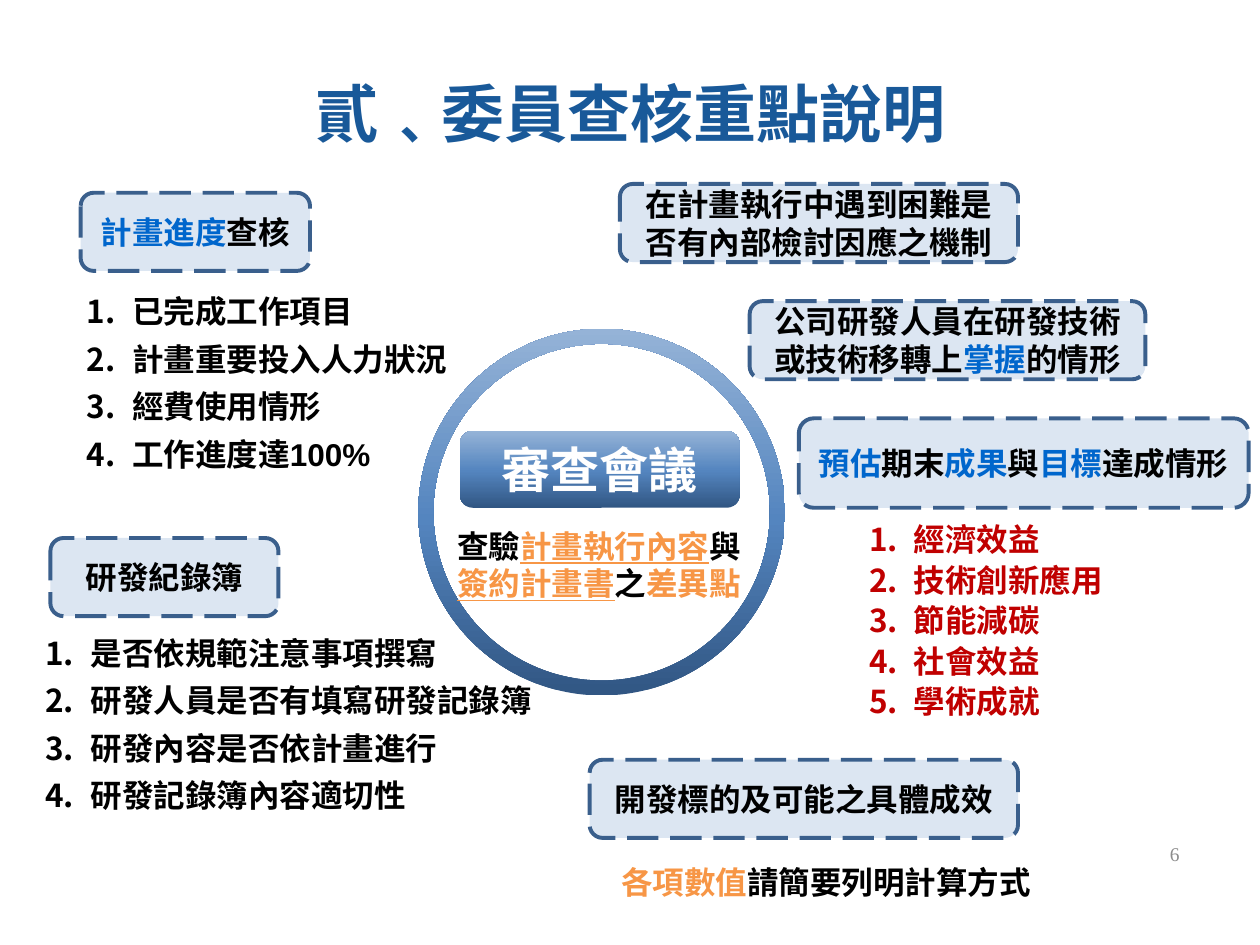
from copy import deepcopy

from lxml.etree import SubElement
from pptx import Presentation
from pptx.dml.color import RGBColor
from pptx.enum.dml import MSO_LINE
from pptx.enum.shapes import MSO_SHAPE
from pptx.enum.text import MSO_ANCHOR, MSO_AUTO_SIZE, PP_ALIGN
from pptx.oxml.ns import qn
from pptx.util import Inches, Pt

BLACK = RGBColor(0, 0, 0)
WHITE = RGBColor(0xFF, 0xFF, 0xFF)
NAVY = RGBColor(0x19, 0x59, 0x99)
BLUE = RGBColor(0x00, 0x66, 0xCC)
ORANGE = RGBColor(0xF7, 0x96, 0x46)
RED = RGBColor(0xC0, 0, 0)
GRAY = RGBColor(0x8C, 0x8C, 0x8C)
PALE = RGBColor(0xDC, 0xE6, 0xF2)
BORDER = RGBColor(0x3A, 0x5F, 0x8C)
GRADIENT = [(0, RGBColor(0x31, 0x56, 0x83)), (0.48, RGBColor(0x54, 0x85, 0xBF)),
            (1, RGBColor(0x95, 0xB3, 0xD7))]
SANS, CJK, SERIF = "Arial", "Noto Sans CJK SC", "Times New Roman"

TITLE = [("貳", NAVY), ("﹑", NAVY, CJK), ("委員查核重點說明", NAVY)]
TOPICS = [
    ((0.64, 1.53, 1.82, 0.62), [("計畫進度", BLUE), ("查核", BLACK)]),
    ((5.95, 2.39, 3.14, 0.62), [("公司研發人員在研發技術或技術移轉上", BLACK),
                                ("掌握", BLUE), ("的情形", BLACK)]),
    ((0.4, 4.27, 1.81, 0.62), [("研發紀錄簿", BLACK)]),
    ((6.34, 3.32, 3.57, 0.71), [("預估", BLUE), ("期末", BLACK), ("成果", BLUE),
                                ("與", BLACK), ("目標", BLUE), ("達成情形", BLACK)]),
    ((4.92, 1.46, 3.16, 0.62), [("在計畫執行中遇到困難是否有內部檢討因應之機制", BLACK)]),
    ((4.68, 6.03, 3.4, 0.62), [("開發標的及可能之具體成效", BLACK)]),
]
LISTS = [
    (2, (0.22, 2.27, 3.51, 1.57), BLACK, 0.73, 0.36, 1.0, 5.5,
     ["已完成工作項目", "計畫重要投入人力狀況", "經費使用情形", "工作進度達100%"]),
    (1, (-0.11, 4.98, 4.45, 1.57), BLACK, 0.73, 0.36, 1.0, 5.5,
     ["是否依規範注意事項撰寫", "研發人員是否有填寫研發記錄簿", "研發內容是否依計畫進行", "研發記錄簿內容適切性"]),
    (4, (6.26, 4.06, 2.98, 1.71), RED, 0.89, 0.35, Pt(23.1), 0,
     ["經濟效益", "技術創新應用", "節能減碳", "社會效益", "學術成就"]),
]
NOTE_INDEX = 3
NOTE = [("各項數值", ORANGE, CJK), ("請簡要列明計算方式", BLACK, CJK)]
MEETING = [("審查會議", WHITE)]
CHECKS = [
    [("查驗", BLACK), ("計畫執行內容", ORANGE, SANS, True), ("與", BLACK)],
    [("簽約計畫書", ORANGE, SANS, True), ("之", BLACK), ("差異點", ORANGE)],
]


def place(sp, box):
    sp.left, sp.top, sp.width, sp.height = map(Inches, box)


def prepare(sp, anchor=MSO_ANCHOR.TOP):
    tf = sp.text_frame
    tf.word_wrap = True
    tf.auto_size = MSO_AUTO_SIZE.NONE
    tf.vertical_anchor = anchor
    return tf


def write(p, runs, size=18, align=PP_ALIGN.CENTER, bold=True):
    p.alignment = align
    p.space_before = Pt(0)
    for text, color, *style in runs:
        r = p.add_run()
        r.text = text
        r.font.name = style[0] if style else SANS
        r.font.size = Pt(size)
        r.font.bold = bold
        r.font.underline = len(style) > 1
        r.font.color.rgb = color


def set_bullet(p, left=0, hanging=0, numbered=False):
    pPr = p._p.get_or_add_pPr()
    pPr.set("marL", str(Inches(left)))
    pPr.set("indent", str(-Inches(hanging)))
    if numbered:
        SubElement(pPr, qn("a:buFont"), typeface=SANS)
        SubElement(pPr, qn("a:buAutoNum"), type="arabicPeriod")
    else:
        SubElement(pPr, qn("a:buNone"))


def add_shape(s, kind, box):
    sp = s.shapes.add_shape(kind, *map(Inches, box))
    sp.shadow.inherit = False
    return sp


def fill_gradient(sp):
    sp.line.fill.background()
    sp.fill.gradient()
    sp.fill.gradient_angle = 90
    stops = sp._element.spPr.find(".//" + qn("a:gsLst"))
    stops.append(deepcopy(stops[-1]))
    for stop, (position, color) in zip(sp.fill.gradient_stops, GRADIENT):
        stop.position = position
        stop.color.rgb = color


def main():
    prs = Presentation()
    prs.slide_width, prs.slide_height = Inches(10), Inches(7.5)
    s = prs.slides.add_slide(prs.slide_layouts.get_by_name("Comparison"))

    place(s.shapes.title, (0.46, 0.67, 9.09, 0.44))
    tf = prepare(s.shapes.title, MSO_ANCHOR.MIDDLE)
    write(tf.paragraphs[0], TITLE, 36)

    for index, box, color, left, hanging, spacing, after, items in LISTS:
        body = s.placeholders[index]
        place(body, box)
        tf = prepare(body)
        for i, item in enumerate(items):
            p = tf.add_paragraph() if i else tf.paragraphs[0]
            set_bullet(p, left, hanging, True)
            write(p, [(item, color)], align=PP_ALIGN.LEFT)
            p.line_spacing = spacing
            p.space_after = Pt(after)

    note = s.placeholders[NOTE_INDEX]
    place(note, (4.83, 6.8, 3.54, 0.4))
    p = prepare(note).paragraphs[0]
    set_bullet(p)
    write(p, NOTE, align=PP_ALIGN.LEFT)

    ring = add_shape(s, MSO_SHAPE.DONUT, (3.32, 2.61, 2.91, 2.91))
    ring.adjustments[0] = 0.041
    fill_gradient(ring)

    meeting = add_shape(s, MSO_SHAPE.ROUNDED_RECTANGLE, (3.65, 3.42, 2.22, 0.61))
    fill_gradient(meeting)
    write(prepare(meeting, MSO_ANCHOR.MIDDLE).paragraphs[0], MEETING, 28)

    checks = s.shapes.add_textbox(*map(Inches, (3.37, 4.13, 2.77, 0.71)))
    tf = prepare(checks)
    for i, runs in enumerate(CHECKS):
        write(tf.add_paragraph() if i else tf.paragraphs[0], runs)

    for box, runs in TOPICS:
        topic = add_shape(s, MSO_SHAPE.ROUNDED_RECTANGLE, box)
        topic.fill.solid()
        topic.fill.fore_color.rgb = PALE
        topic.line.color.rgb = BORDER
        topic.line.width = Pt(2.25)
        topic.line.dash_style = MSO_LINE.LONG_DASH
        write(prepare(topic, MSO_ANCHOR.MIDDLE).paragraphs[0], runs)

    number = s.shapes.add_textbox(*map(Inches, (7.21, 6.59, 2.25, 0.37)))
    p = prepare(number, MSO_ANCHOR.MIDDLE).paragraphs[0]
    write(p, [("6", GRAY, SERIF)], 11.1, PP_ALIGN.RIGHT, False)

    prs.save("out.pptx")


if __name__ == "__main__":
    main()
